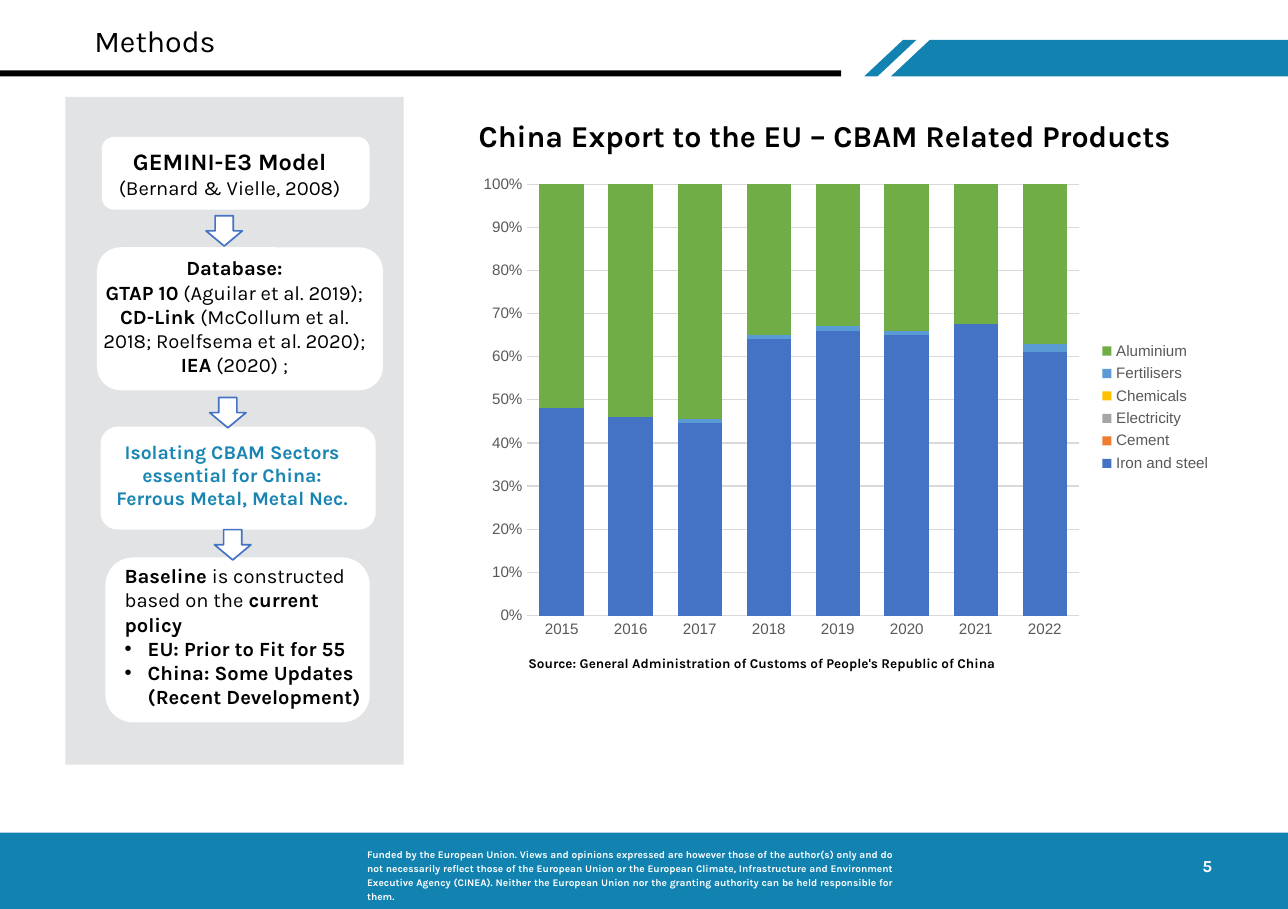
import pptx
import pptx.chart.data
import pptx.dml.color
import pptx.enum.chart
import pptx.enum.shapes
import pptx.enum.text
import pptx.oxml
import pptx.oxml.ns
import pptx.util

Inches = pptx.util.Inches
Pt = pptx.util.Pt
Shape = pptx.enum.shapes.MSO_SHAPE
Align = pptx.enum.text.PP_ALIGN
COLORS = {
    "teal": "1283B1", "highlight": "1885B2", "black": "000000", "white": "FFFFFF",
    "panel": "E2E3E4", "blue": "4472C4", "orange": "ED7D31", "gray": "A5A5A5",
    "yellow": "FFC000", "sky": "5B9BD5", "green": "70AD47",
    "axis": "595959", "grid": "D9D9D9",
}


class MethodsSlide:
    font_name = "Karla"
    chart_font = "Arial"

    def __init__(self, presentation):
        self.slide = presentation.slides.add_slide(presentation.slide_layouts[6])

    def color(self, name):
        return pptx.dml.color.RGBColor.from_string(COLORS[name])

    def paint(self, shape, fill, line=None):
        shape.shadow.inherit = False
        shape.fill.solid()
        shape.fill.fore_color.rgb = self.color(fill)
        if line:
            shape.line.color.rgb = self.color(line)
            shape.line.width = Pt(1)
        else:
            shape.line.fill.background()

    def block(self, kind, box, fill, line=None):
        shape = self.slide.shapes.add_shape(kind, *map(Inches, box))
        self.paint(shape, fill, line)

    def outline(self, points, fill):
        corners = [(Inches(x), Inches(y)) for x, y in points]
        builder = self.slide.shapes.build_freeform(*corners[0])
        builder.add_line_segments(corners[1:], close=True)
        self.paint(builder.convert_to_shape(), fill)

    def style(self, font, size, color, bold=None, name=None):
        font.name = name or self.font_name
        font.size = Pt(size)
        font.color.rgb = self.color(color)
        if bold is not None:
            font.bold = bold

    def bullet(self, paragraph):
        properties = paragraph._p.get_or_add_pPr()
        properties.set("marL", str(Inches(0.19)))
        properties.set("indent", str(-Inches(0.19)))
        namespace = pptx.oxml.ns.nsdecls("a")
        for element in ('buFont {} typeface="Arial"', 'buChar {} char="•"'):
            properties.append(pptx.oxml.parse_xml(f"<a:{element.format(namespace)}/>"))

    def text(self, box, paragraphs, size=12, color="black", align=Align.LEFT,
             inset=0.1, spacing=None, wrap=True, middle=False):
        frame = self.slide.shapes.add_textbox(*map(Inches, box)).text_frame
        frame.word_wrap = wrap
        frame.margin_left = frame.margin_right = Inches(inset)
        frame.margin_top = frame.margin_bottom = Inches(0.05)
        if middle:
            frame.vertical_anchor = pptx.enum.text.MSO_ANCHOR.MIDDLE
        for index, item in enumerate(paragraphs):
            paragraph = frame.add_paragraph() if index else frame.paragraphs[0]
            paragraph.alignment = align
            if spacing:
                paragraph.line_spacing = spacing
            if item.get("bullet"):
                self.bullet(paragraph)
            runs = item["runs"]
            weights = {bold for _, bold in runs}
            shared = runs[0][1] if len(weights) == 1 else None
            self.style(paragraph.font, item.get("size", size), color, shared)
            for words, bold in runs:
                run = paragraph.add_run()
                run.text = words
                if shared is None:
                    run.font.bold = bold

    def chart(self, box, years, series):
        data = pptx.chart.data.CategoryChartData(number_format="0")
        data.categories = years
        for name, _, values in series:
            data.add_series(name, values)
        chart = self.slide.shapes.add_chart(
            pptx.enum.chart.XL_CHART_TYPE.COLUMN_STACKED_100,
            *map(Inches, box), data).chart
        self.style(chart.font, 10, "black", name=self.chart_font)
        chart.has_title = False
        chart.has_legend = True
        chart.legend.position = pptx.enum.chart.XL_LEGEND_POSITION.RIGHT
        chart.legend.include_in_layout = False
        self.style(chart.legend.font, 9, "axis", name=self.chart_font)
        plot = chart.plots[0]
        plot.gap_width = 55
        plot.overlap = 100
        plot.vary_by_categories = False
        for column, (_, color, _) in zip(plot.series, series):
            column.format.fill.solid()
            column.format.fill.fore_color.rgb = self.color(color)
        for axis in (chart.category_axis, chart.value_axis):
            axis.major_tick_mark = pptx.enum.chart.XL_TICK_MARK.NONE
            axis.minor_tick_mark = pptx.enum.chart.XL_TICK_MARK.NONE
            self.style(axis.tick_labels.font, 9, "axis", name=self.chart_font)
        chart.value_axis.tick_labels.number_format = "0%"
        chart.value_axis.tick_labels.number_format_is_linked = False
        chart.value_axis.format.line.fill.background()
        for line in (chart.category_axis.format.line,
                     chart.value_axis.major_gridlines.format.line):
            line.color.rgb = self.color("grid")
            line.width = Pt(0.75)
        self.place_plot(chart, x=0.08, y=0.04, w=0.73, h=0.89)

    def place_plot(self, chart, **fractions):
        area = chart._chartSpace.chart.plotArea
        for layout in area.findall(pptx.oxml.ns.qn("c:layout")):
            area.remove(layout)
        sizes = "".join(f'<c:{key} val="{value}"/>' for key, value in fractions.items())
        area.insert(0, pptx.oxml.parse_xml(
            f'<c:layout {pptx.oxml.ns.nsdecls("c")}><c:manualLayout>'
            '<c:layoutTarget val="inner"/><c:xMode val="edge"/><c:yMode val="edge"/>'
            f'{sizes}</c:manualLayout></c:layout>'))


def line(*runs, **options):
    return {"runs": runs, **options}


def main():
    presentation = pptx.Presentation()
    presentation.slide_width = Pt(765)
    presentation.slide_height = Pt(540)
    page = MethodsSlide(presentation)

    page.outline([(7.13, 0.63), (7.45, 0.33), (7.56, 0.33), (7.24, 0.63)], "teal")
    page.outline([(7.35, 0.63), (7.67, 0.33), (10.63, 0.33), (10.63, 0.63)], "teal")
    page.block(Shape.RECTANGLE, (0, 0.58, 6.94, 0.05), "black")
    page.block(Shape.RECTANGLE, (0, 6.87, 10.63, 0.63), "teal")
    page.text((2.93, 6.94, 4.53, 0.56), [line((
        "Funded by the European Union. Views and opinions expressed are however those "
        "of the author(s) only and do not necessarily reflect those of the European "
        "Union or the European Climate, Infrastructure and Environment Executive Agency "
        "(CINEA). Neither the European Union nor the granting authority can be held "
        "responsible for them.", True))],
        size=6, color="white", align=Align.JUSTIFY, spacing=1.15)
    page.text((0.68, 0.13, 1.89, 0.48), [line(("Methods", False))], size=18)
    page.text((9.76, 7.01, 0.29, 0.27), [line(("5", True))], size=10, color="white",
              align=Align.RIGHT, inset=0.05, wrap=False, middle=True)

    page.block(Shape.RECTANGLE, (0.54, 0.8, 2.79, 5.51), "panel")
    for box in [(0.84, 1.13, 2.21, 0.6), (0.8, 2.04, 2.36, 1.18),
                (0.83, 3.52, 2.27, 0.85), (0.87, 4.6, 2.18, 1.36)]:
        page.block(Shape.ROUNDED_RECTANGLE, box, "white")
    for left, top in [(1.7, 1.78), (1.73, 3.28), (1.77, 4.37)]:
        page.block(Shape.DOWN_ARROW, (left, top, 0.3, 0.25), "white", "blue")

    centered = {"align": Align.CENTER, "inset": 0.05}
    page.text((0.65, 1.16, 2.49, 0.72), [
        line(("GEMINI-E3 Model", True), size=14),
        line(("(Bernard & Vielle, 2008)", False))], **centered)
    page.text((0.8, 2.06, 2.27, 1.11), [
        line(("Database:", True)),
        line(("GTAP 10", True), (" (Aguilar et al. 2019);", False)),
        line(("CD-Link", True),
             (" (McCollum et al. 2018; Roelfsema et al. 2020);", False)),
        line(("IEA", True), (" (2020) ;", False))], **centered)
    page.text((0.75, 3.58, 2.33, 0.68), [
        line(("Isolating CBAM Sectors essential for China:", True)),
        line(("Ferrous Metal, Metal Nec.", True))],
        size=11.5, color="highlight", **centered)
    page.text((0.93, 4.6, 2.21, 1.31), [
        line(("Baseline", True), (" is constructed based on the ", False),
             ("current policy", True)),
        line(("EU: Prior to Fit for 55", True), bullet=True),
        line(("China: Some Updates (Recent Development)", True), bullet=True)])

    years = [str(year) for year in range(2015, 2023)]
    page.chart((3.85, 1.36, 6.24, 4), years, [
        ("Iron and steel", "blue", [48, 46, 45, 64, 66, 65, 67, 61]),
        ("Cement", "orange", [0] * len(years)),
        ("Electricity", "gray", [0] * len(years)),
        ("Chemicals", "yellow", [0] * len(years)),
        ("Fertilisers", "sky", [0, 0, 1, 1, 1, 1, 0, 2]),
        ("Aluminium", "green", [52, 54, 55, 35, 33, 34, 32, 37])])
    page.text((4.26, 5.36, 5.31, 0.24), [line((
        "Source: General Administration of Customs of People's Republic of China",
        True))], size=8)
    page.text((3.85, 0.92, 6.5, 0.4), [line((
        "China Export to the EU – CBAM Related Products", True))], size=18)
    presentation.save("out.pptx")


if __name__ == "__main__":
    main()
